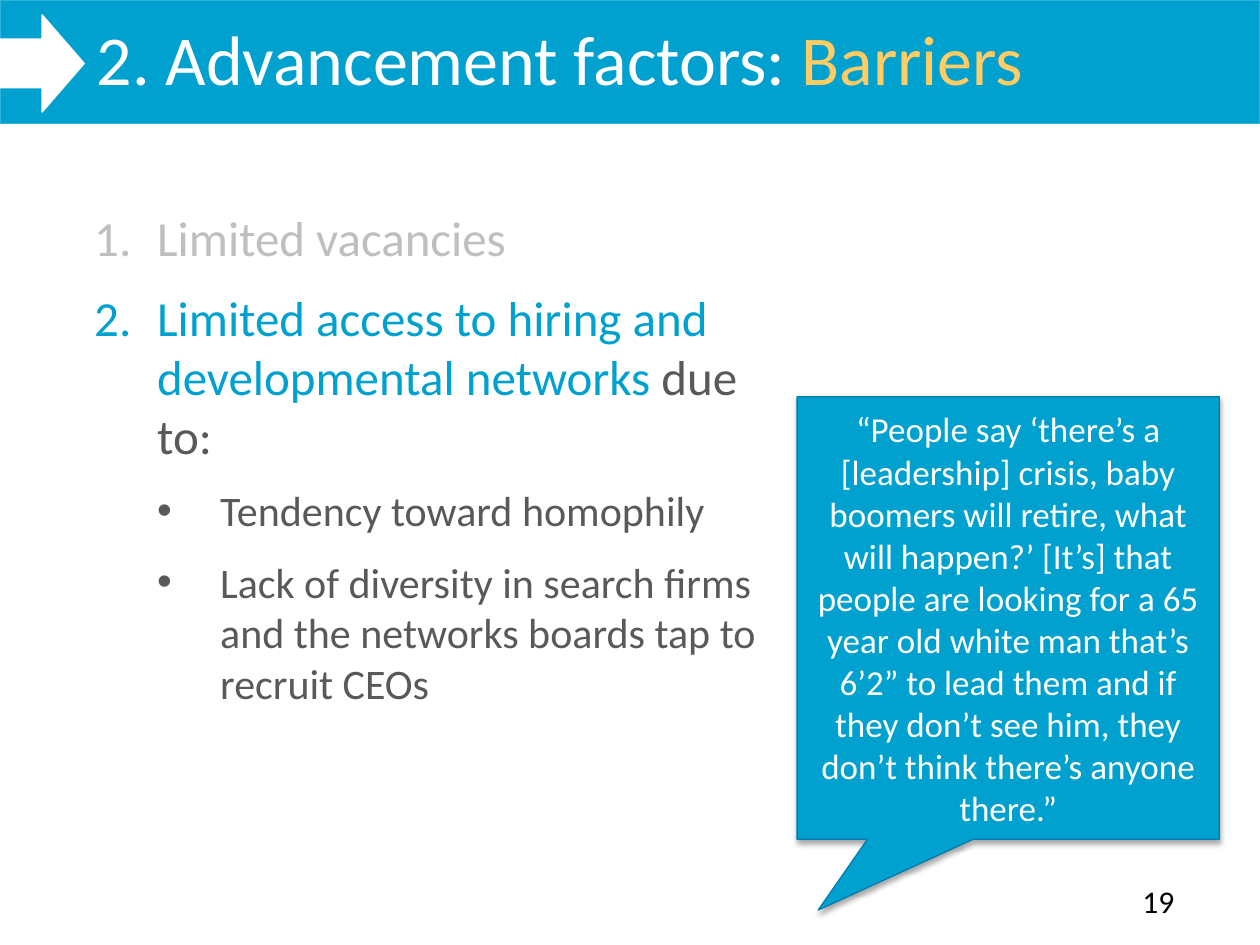
from lxml.etree import SubElement
from pptx import Presentation
from pptx.dml.color import RGBColor
from pptx.enum.shapes import MSO_SHAPE as Preset
from pptx.enum.text import MSO_ANCHOR as Anchor, PP_ALIGN as Align
from pptx.oxml.ns import qn
from pptx.util import Cm, Pt

FONT = "Calibri"
BLUE, DARK_BLUE, LIGHT_BLUE = "00A0CF", "007CAE", "32B2DD"
WHITE, BLACK, GOLD = "FFFFFF", "000000", "FFCC66"
PALE_GRAY, DARK_GRAY = "BFBFBF", "595959"
HANGING = Cm(1.27)
QUOTE = (
    "“People say ‘there’s a [leadership] crisis, baby boomers will retire, "
    "what will happen?’ [It’s] that people are looking for a 65 year old white "
    "man that’s 6’2” to lead them and if they don’t see him, they don’t think "
    "there’s anyone there.”"
)


def color(value):
    return RGBColor.from_string(value)


def add_panel(slide, preset, left, top, width, height, fill, line):
    shape = slide.shapes.add_shape(preset, Cm(left), Cm(top), Cm(width), Cm(height))
    shape.shadow.inherit = False
    shape.fill.solid()
    shape.fill.fore_color.rgb = color(fill)
    shape.line.color.rgb = color(line)
    shape.line.width = Pt(0.75)
    return shape


def add_drop_shadow(shape):
    effects = shape._element.spPr.find(qn("a:effectLst"))
    shadow = SubElement(effects, qn("a:outerShdw"), blurRad=str(Pt(3.1)),
                        dist=str(Pt(1.8)), dir="5400000", rotWithShape="0")
    black = SubElement(shadow, qn("a:srgbClr"), val=BLACK)
    SubElement(black, qn("a:alpha"), val="35000")


def add_text_frame(slide, left, top, width, height):
    box = slide.shapes.add_textbox(Cm(left), Cm(top), Cm(width), Cm(height))
    box.text_frame.word_wrap = True
    return box.text_frame


def write(paragraph, size, *parts):
    paragraph.font.name = FONT
    paragraph.font.size = Pt(size)
    if len(parts) == 1:
        paragraph.font.color.rgb = color(parts[0][1])
    for text, shade in parts:
        run = paragraph.add_run()
        run.text = text
        if len(parts) > 1:
            run.font.color.rgb = color(shade)


def set_hanging(paragraph, level=0):
    properties = paragraph._p.get_or_add_pPr()
    properties.set("marL", str(HANGING * (level + 1)))
    properties.set("indent", str(-HANGING))
    return properties


def set_bullet(paragraph, level):
    paragraph.level = level
    paragraph.space_after = Pt(12)
    properties = set_hanging(paragraph, level)
    if level:
        SubElement(properties, qn("a:buFont"), typeface="Arial")
        SubElement(properties, qn("a:buChar"), char="•")
    else:
        SubElement(properties, qn("a:buFont"), typeface="+mj-lt")
        SubElement(properties, qn("a:buAutoNum"), type="arabicPeriod")


def add_header(slide):
    add_panel(slide, Preset.RECTANGLE, 0, 0, 25.4, 2.49, BLUE, LIGHT_BLUE)
    add_panel(slide, Preset.RIGHT_ARROW, 0, 0.3, 1.7, 1.96, WHITE, WHITE)
    title = add_text_frame(slide, 1.7, 0.18, 23.7, 3.18).paragraphs[0]
    set_hanging(title)
    write(title, 40, ("2. Advancement factors: ", WHITE), ("Barriers", GOLD))


def add_barriers(slide):
    items = [
        (0, 28, [("Limited vacancies", PALE_GRAY)]),
        (0, 28, [("Limited access to hiring and developmental networks", BLUE),
                 (" due to:", DARK_GRAY)]),
        (1, 24, [("Tendency toward homophily", DARK_GRAY)]),
        (1, 24, [("Lack of diversity in search firms and the networks boards "
                  "tap to recruit CEOs", DARK_GRAY)]),
    ]
    frame = add_text_frame(slide, 1.65, 4.06, 14.4, 12.07)
    for index, (level, size, parts) in enumerate(items):
        paragraph = frame.add_paragraph() if index else frame.paragraphs[0]
        set_bullet(paragraph, level)
        write(paragraph, size, *parts)


def add_quote(slide):
    callout = add_panel(slide, Preset.RECTANGULAR_CALLOUT,
                        16.07, 8, 8.51, 8.92, BLUE, DARK_BLUE)
    callout.adjustments[0] = -0.45
    callout.adjustments[1] = 0.66
    add_drop_shadow(callout)
    frame = callout.text_frame
    frame.word_wrap = True
    frame.vertical_anchor = Anchor.MIDDLE
    paragraph = frame.paragraphs[0]
    paragraph.alignment = Align.CENTER
    write(paragraph, 20, (QUOTE, WHITE))


def main():
    presentation = Presentation()
    presentation.slide_width = Cm(25.4)
    presentation.slide_height = Cm(19.05)
    slide = presentation.slides.add_slide(presentation.slide_layouts[6])
    add_header(slide)
    page_number = add_text_frame(slide, 22.78, 17.65, 1.35, 1.02)
    write(page_number.paragraphs[0], 18, ("19", BLACK))
    add_barriers(slide)
    add_quote(slide)
    presentation.save("out.pptx")


if __name__ == "__main__":
    main()
